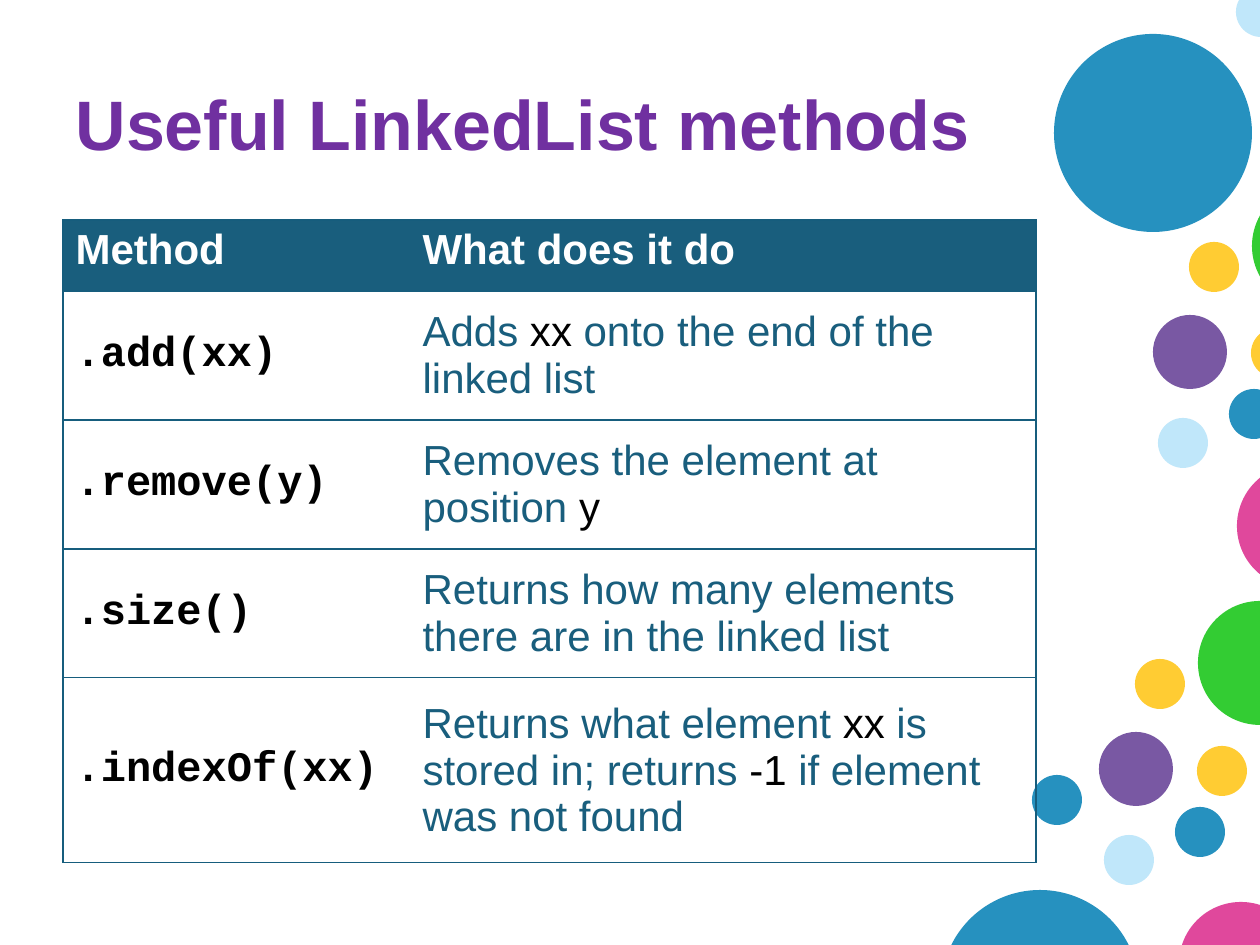
from dataclasses import dataclass

from lxml import etree
from pptx import Presentation
from pptx.dml.color import RGBColor
from pptx.enum.shapes import MSO_SHAPE
from pptx.enum.text import MSO_ANCHOR, PP_ALIGN
from pptx.oxml.ns import qn
from pptx.util import Emu, Pt

OVAL = MSO_SHAPE.OVAL
TOP, MIDDLE = MSO_ANCHOR.TOP, MSO_ANCHOR.MIDDLE
LEFT = PP_ALIGN.LEFT
TITLE_ONLY = 5
PX_PER_INCH = 126


@dataclass(frozen=True)
class Theme:
    blue: str = "2691BF"
    pale: str = "C0E7FA"
    green: str = "33CC33"
    yellow: str = "FFCC33"
    pink: str = "E0489C"
    violet: str = "7958A3"
    title: str = "7030A0"
    body: str = "195E7D"
    border: str = "165D7D"
    code: str = "000000"
    white: str = "FFFFFF"
    title_size: int = 40
    table_size: int = 24
    border_size: float = 0.75
    sans: str = "Arial"
    mono: str = "Courier New"


THEME = Theme()


@dataclass(frozen=True)
class Bubble:
    left: int
    top: int
    size: int
    color: str


@dataclass(frozen=True)
class Span:
    text: str
    color: str = THEME.body
    bold: bool = False
    font: str = THEME.sans
    size: int = THEME.table_size


@dataclass(frozen=True)
class Method:
    name: str
    description: tuple[Span, ...]
    height: int


SMALL, MEDIUM, LARGE, HUGE = 50, 74, 124, 198

BUBBLES = (
    # Lower cluster
    Bubble(1198, 601, LARGE, THEME.green),
    Bubble(1135, 659, SMALL, THEME.yellow),
    Bubble(1237, 464, LARGE, THEME.pink),
    Bubble(1099, 732, MEDIUM, THEME.violet),
    Bubble(1032, 775, SMALL, THEME.blue),
    Bubble(1197, 746, SMALL, THEME.yellow),
    Bubble(1104, 835, SMALL, THEME.pale),
    Bubble(1175, 807, SMALL, THEME.blue),
    # Upper cluster
    Bubble(1054, 34, HUGE, THEME.blue),
    Bubble(1252, 184, LARGE, THEME.green),
    Bubble(1189, 242, SMALL, THEME.yellow),
    Bubble(1153, 315, MEDIUM, THEME.violet),
    Bubble(1251, 328, SMALL, THEME.yellow),
    Bubble(1158, 418, SMALL, THEME.pale),
    Bubble(1229, 389, SMALL, THEME.blue),
    # Page edges
    Bubble(941, 890, HUGE, THEME.blue),
    Bubble(1179, 902, LARGE, THEME.pink),
    Bubble(1236, -13, SMALL, THEME.pale),
)

METHODS = (
    Method(".add(xx)", (Span("Adds "), Span("xx ", THEME.code),
                        Span("onto the end of the linked list")), 129),
    Method(".remove(y)", (Span("Removes the element at position "),
                          Span("y", THEME.code)), 129),
    Method(".size()", (Span("Returns how many elements there are in the linked list"),), 129),
    Method(".indexOf(xx)", (Span("Returns what element "), Span("xx ", THEME.code),
                            Span("is stored in; returns "), Span("-1", THEME.code),
                            Span(" if element was not found")), 185),
)
HEADINGS = ("Method", "What does it do")
HEADER_HEIGHT = 71
COLUMN_WIDTHS = (347, 626)


def px(length: int) -> Emu:
    return Emu(round(length * 914400 / PX_PER_INCH))


def add_spans(para, spans: tuple[Span, ...]) -> None:
    para.alignment = LEFT
    for span in spans:
        run = para.add_run()
        run.text = span.text
        run.font.name = span.font
        run.font.size = Pt(span.size)
        run.font.bold = span.bold
        run.font.color.rgb = RGBColor.from_string(span.color)


def draw_bubble(page, bubble: Bubble) -> None:
    shape = page.shapes.add_shape(OVAL, px(bubble.left), px(bubble.top),
                                  px(bubble.size), px(bubble.size))
    shape.shadow.inherit = False
    shape.fill.solid()
    shape.fill.fore_color.rgb = RGBColor.from_string(bubble.color)
    shape.line.fill.background()


def set_borders(cell, visible: str) -> None:
    """Draw the sides named in visible (L, R, T, B) and hide the others."""
    properties = cell._tc.get_or_add_tcPr()
    for index, side in enumerate("LRTB"):
        line = etree.Element(qn(f"a:ln{side}"), w=str(Pt(THEME.border_size)))
        if side in visible:
            fill = etree.SubElement(line, qn("a:solidFill"))
            etree.SubElement(fill, qn("a:srgbClr"), val=THEME.border)
        else:
            etree.SubElement(line, qn("a:noFill"))
        properties.insert(index, line)


def fill_cell(cell, spans: tuple[Span, ...], fill: str | None, anchor, borders: str) -> None:
    if fill:
        cell.fill.solid()
        cell.fill.fore_color.rgb = RGBColor.from_string(fill)
    else:
        cell.fill.background()
    cell.vertical_anchor = anchor
    add_spans(cell.text_frame.paragraphs[0], spans)
    set_borders(cell, borders)


def draw_title(page, text: str) -> None:
    box = page.shapes.title
    box.left, box.top, box.width, box.height = px(63), px(38), px(997), px(195)
    frame = box.text_frame
    frame.vertical_anchor = MIDDLE
    frame.margin_bottom = px(32)
    add_spans(frame.paragraphs[0],
              (Span(text, THEME.title, True, size=THEME.title_size),))


def draw_methods(page, methods: tuple[Method, ...]) -> None:
    heights = (HEADER_HEIGHT, *(method.height for method in methods))
    table = page.shapes.add_table(len(heights), len(COLUMN_WIDTHS), px(63), px(220),
                                  px(sum(COLUMN_WIDTHS)), px(sum(heights))).table
    table.horz_banding = False
    for column, width in zip(table.columns, COLUMN_WIDTHS):
        column.width = px(width)
    for row, height in zip(table.rows, heights):
        row.height = px(height)

    # Only the outer vertical sides carry a line
    sides = ("LTB", "RTB")
    for column, heading in enumerate(HEADINGS):
        fill_cell(table.cell(0, column), (Span(heading, THEME.white, True),),
                  THEME.body, TOP, sides[column])
    for row, method in enumerate(methods, start=1):
        name = (Span(method.name, THEME.code, True, THEME.mono),)
        for column, spans in enumerate((name, method.description)):
            fill_cell(table.cell(row, column), spans, None, MIDDLE, sides[column])


def main() -> None:
    deck = Presentation()
    deck.slide_width, deck.slide_height = px(1260), px(945)
    page = deck.slides.add_slide(deck.slide_layouts[TITLE_ONLY])
    for bubble in BUBBLES:
        draw_bubble(page, bubble)
    draw_title(page, "Useful LinkedList methods")
    draw_methods(page, METHODS)
    deck.save("out.pptx")


if __name__ == "__main__":
    main()
